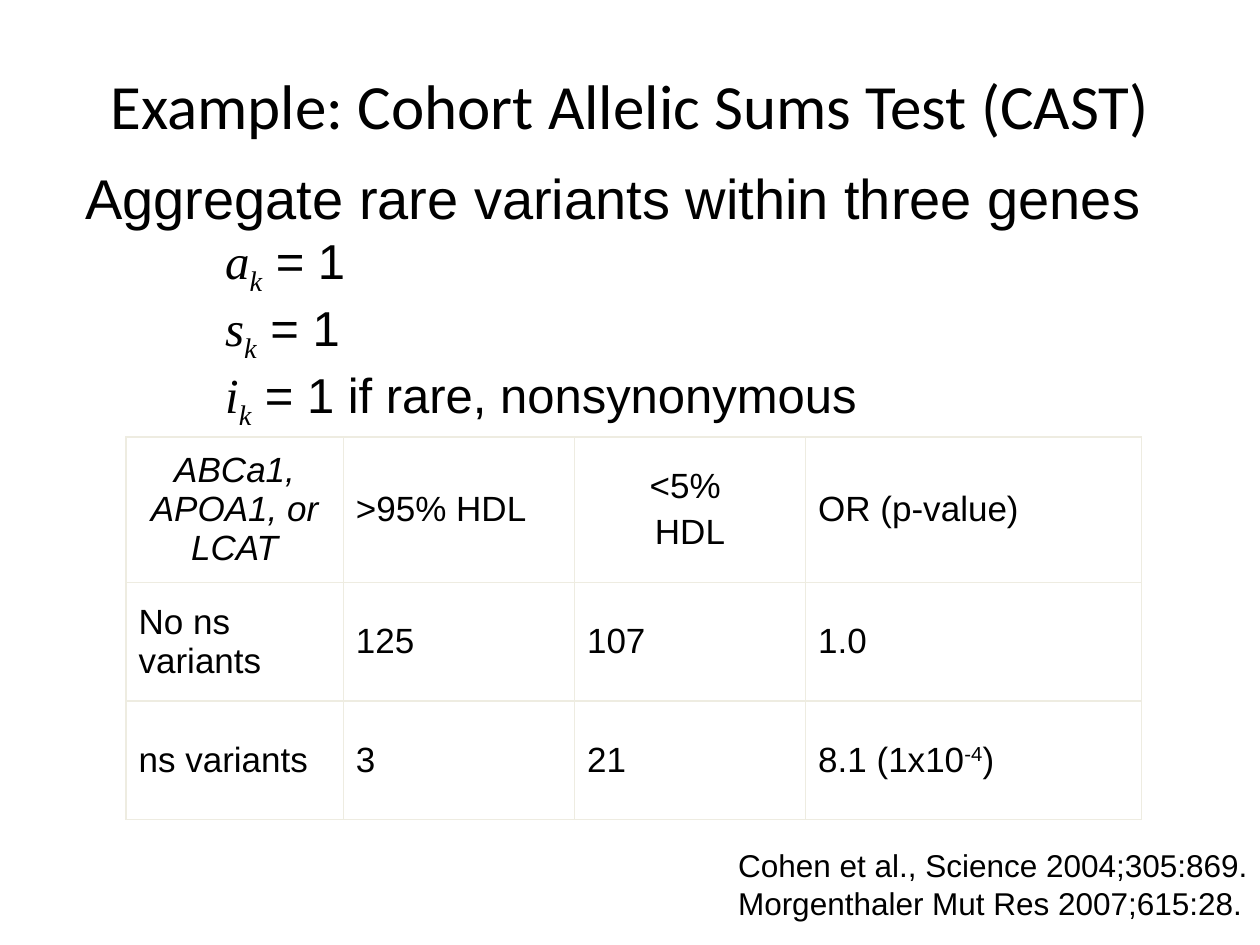
from lxml import etree
from pptx import Presentation
from pptx import util as u
from pptx.dml.color import RGBColor
from pptx.enum import text
from pptx.oxml.ns import qn

BLACK = RGBColor(0x00, 0x00, 0x00)
BORDER = RGBColor(0xEE, 0xEC, 0xE1)
CENTER = text.PP_ALIGN.CENTER

FORMULAS = [("a", " = 1"), ("s", " = 1"), ("i", " = 1 if rare, nonsynonymous")]
CITATIONS = ["Cohen et al., Science 2004;305:869.",
             "Morgenthaler Mut Res 2007;615:28."]
COUNTS = [
    ["ABCa1, APOA1, or LCAT", ">95% HDL", "<5% \nHDL", "OR (p-value)"],
    ["No ns variants", "125", "107", "1.0"],
    ["ns variants", "3", "21", "8.1 (1x10"],
]
COLUMN_WIDTHS = [4.38, 4.66, 4.66, 6.77]
ROW_HEIGHTS = [2.93, 2.39, 2.39]


def style(font, size, name="Arial", italic=None):
    font.size, font.name, font.italic = u.Pt(size), name, italic
    font.color.rgb = BLACK


def add_run(paragraph, words, baseline=None):
    run = paragraph.add_run()
    run.text = words
    if baseline:
        run._r.get_or_add_rPr().set("baseline", str(baseline * 1000))
    return run


def add_text(slide, left, top, width, height, lines, size, name="Arial"):
    box = slide.shapes.add_textbox(u.Cm(left), u.Cm(top), u.Cm(width), u.Cm(height))
    frame = box.text_frame
    frame.word_wrap = True
    frame.text = "\n".join(lines)
    for paragraph in frame.paragraphs:
        style(paragraph.font, size, name)
    return frame


def add_formula(frame, symbol, value):
    formula = frame.add_paragraph()
    formula.level = 1
    properties = formula._p.get_or_add_pPr()
    properties.set("marL", str(u.Cm(2.82)))
    properties.set("indent", str(u.Cm(-1.7)))
    for words, baseline in (("\t" + symbol, None), ("k", -25)):
        style(add_run(formula, words, baseline).font, 28, "Times New Roman", True)
    style(add_run(formula, value).font, 28)


def draw_borders(cell):
    properties = cell._tc.get_or_add_tcPr()
    for position, side in enumerate(("a:lnL", "a:lnR", "a:lnT", "a:lnB")):
        line = etree.Element(qn(side), w=str(u.Pt(1)))
        fill = etree.SubElement(line, qn("a:solidFill"))
        etree.SubElement(fill, qn("a:srgbClr"), val=str(BORDER))
        properties.insert(position, line)


def fill_cell(cell, words, centered, italic):
    cell.text = words
    cell.vertical_anchor = text.MSO_ANCHOR.MIDDLE
    cell.fill.background()
    draw_borders(cell)
    for paragraph in cell.text_frame.paragraphs:
        style(paragraph.font, 20, italic=italic)
        paragraph.space_before = u.Pt(4)
        if centered:
            paragraph.alignment = CENTER


def add_counts(slide):
    table = slide.shapes.add_table(
        len(ROW_HEIGHTS), len(COLUMN_WIDTHS), u.Cm(2.54), u.Cm(8.81),
        u.Cm(sum(COLUMN_WIDTHS)), u.Cm(sum(ROW_HEIGHTS))).table
    table.first_row = table.horz_banding = False
    for column, width in zip(table.columns, COLUMN_WIDTHS):
        column.width = u.Cm(width)
    for row, height in zip(table.rows, ROW_HEIGHTS):
        row.height = u.Cm(height)
    for r, row in enumerate(COUNTS):
        for c, words in enumerate(row):
            fill_cell(table.cell(r, c), words, r == 0 and c in (0, 2), r == c == 0)
    odds_ratio = table.cell(2, 3).text_frame.paragraphs[0]
    add_run(odds_ratio, "-4", 30)
    add_run(odds_ratio, ")")


def main():
    """Build the slide on the Cohort Allelic Sums Test."""
    deck = Presentation()
    deck.slide_width, deck.slide_height = u.Cm(25.4), u.Cm(19.05)
    slide = deck.slides.add_slide(deck.slide_layouts[6])
    title = add_text(slide, 0, 1.22, 25.4, 3.18,
                     ["Example: Cohort Allelic Sums Test (CAST)"], 36, "Calibri")
    title.paragraphs[0].alignment = CENTER
    add_counts(slide)
    method = add_text(slide, 1.47, 3.17, 22.73, 6.58,
                      ["Aggregate rare variants within three genes"], 32)
    for symbol, value in FORMULAS:
        add_formula(method, symbol, value)
    citations = add_text(slide, 14.63, 16.94, 10.77, 2.1, CITATIONS, 18)
    citations.margin_right = 0
    deck.save("out.pptx")


if __name__ == "__main__":
    main()
